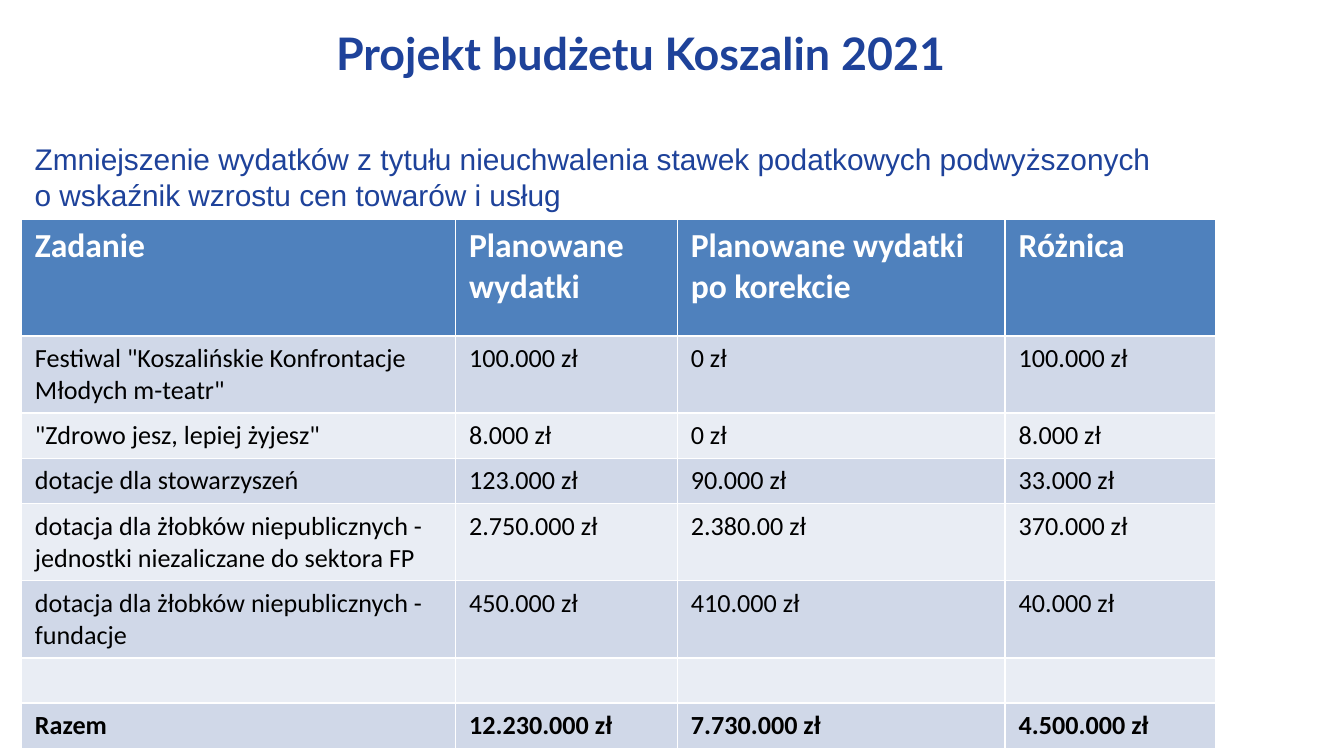
from dataclasses import dataclass

from lxml.etree import SubElement as Sub
from pptx import Presentation
from pptx.dml.color import RGBColor
from pptx.enum.text import MSO_ANCHOR as Anchor, MSO_AUTO_SIZE as Fit, PP_ALIGN as Align
from pptx.oxml.ns import qn
from pptx.util import Inches, Pt

NAVY = RGBColor(0x1E, 0x42, 0x9A)
BLUE = RGBColor(0x4F, 0x81, 0xBD)
DARK = RGBColor(0xD0, 0xD8, 0xE8)
PALE = RGBColor(0xE9, 0xED, 0xF4)
WHITE = RGBColor(0xFF, 0xFF, 0xFF)
BLACK = RGBColor(0, 0, 0)


@dataclass
class Style:
    font: str
    size: int
    color: RGBColor
    bold: bool = False


@dataclass
class Row:
    cells: tuple
    height: float
    fill: RGBColor
    style: Style


HEAD = Style("Calibri", 18, WHITE, True)
BODY = Style("Calibri", 14, BLACK)
TOTAL = Style("Calibri", 14, BLACK, True)

WIDTHS = (3.23, 1.65, 2.44, 1.57)
ROWS = (
    Row(("Zadanie", "Planowane wydatki", "Planowane wydatki po korekcie", "Różnica"),
        0.87, BLUE, HEAD),
    Row(('Festiwal "Koszalińskie Konfrontacje Młodych m-teatr"',
         "100.000 zł", "0 zł", "100.000 zł"), 0.31, DARK, BODY),
    Row(('"Zdrowo jesz, lepiej żyjesz"', "8.000 zł", "0 zł", "8.000 zł"),
        0.31, PALE, BODY),
    Row(("dotacje dla stowarzyszeń", "123.000 zł", "90.000 zł", "33.000 zł"),
        0.31, DARK, BODY),
    Row(("dotacja dla żłobków niepublicznych - jednostki niezaliczane do sektora FP",
         "2.750.000 zł", "2.380.00 zł", "370.000 zł"), 0.31, PALE, BODY),
    Row(("dotacja dla żłobków niepublicznych - fundacje",
         "450.000 zł", "410.000 zł", "40.000 zł"), 0.31, DARK, BODY),
    Row(("", "", "", ""), 0.32, PALE, BODY),
    Row(("Razem", "12.230.000 zł", "7.730.000 zł", "4.500.000 zł"),
        0.29, DARK, TOTAL),
)


def write(frame, text: str, style: Style) -> None:
    frame.text = text
    for para in frame.paragraphs:
        para.alignment = Align.LEFT
        for run in para.runs:
            font = run.font
            font.name = style.font
            font.size = Pt(style.size)
            font.bold = style.bold
            font.color.rgb = style.color
        if not para.runs:
            Sub(para._p, qn("a:endParaRPr"), sz=str(style.size * 100))


def place(shape, left: float, top: float, width: float, height: float) -> None:
    shape.left, shape.top = Inches(left), Inches(top)
    shape.width, shape.height = Inches(width), Inches(height)
    frame = shape.text_frame
    frame.word_wrap = True
    frame.auto_size = Fit.NONE
    frame.vertical_anchor = Anchor.TOP


def grid(slide, left: float, top: float) -> None:
    frame = slide.shapes.add_table(
        len(ROWS), len(WIDTHS), Inches(left), Inches(top),
        Inches(sum(WIDTHS)), Inches(sum(row.height for row in ROWS)))
    table = frame.table
    for col, width in zip(table.columns, WIDTHS):
        col.width = Inches(width)
    for line, row in zip(table.rows, ROWS):
        line.height = Inches(row.height)
        for cell, text in zip(line.cells, row.cells):
            cell.fill.solid()
            cell.fill.fore_color.rgb = row.fill
            write(cell.text_frame, text, row.style)


def main() -> None:
    deck = Presentation()
    deck.slide_width = Inches(10)
    deck.slide_height = deck.slide_width * 9 // 16
    slide = deck.slides.add_slide(deck.slide_layouts[5])
    title = slide.shapes.title
    place(title, 2.4, 0.14, 8.36, 0.5)
    write(title.text_frame, "Projekt budżetu Koszalin 2021", Style("Lato", 24, NAVY, True))
    note = slide.shapes.add_textbox(0, 0, 0, 0)
    place(note, 0.16, 1, 9.06, 1.04)
    write(note.text_frame,
          "Zmniejszenie wydatków z tytułu nieuchwalenia stawek podatkowych podwyższonych \v"
          "o wskaźnik wzrostu cen towarów i usług", Style("Arial", 16, NAVY))
    grid(slide, 0.16, 1.63)
    deck.save("out.pptx")


if __name__ == "__main__":
    main()
